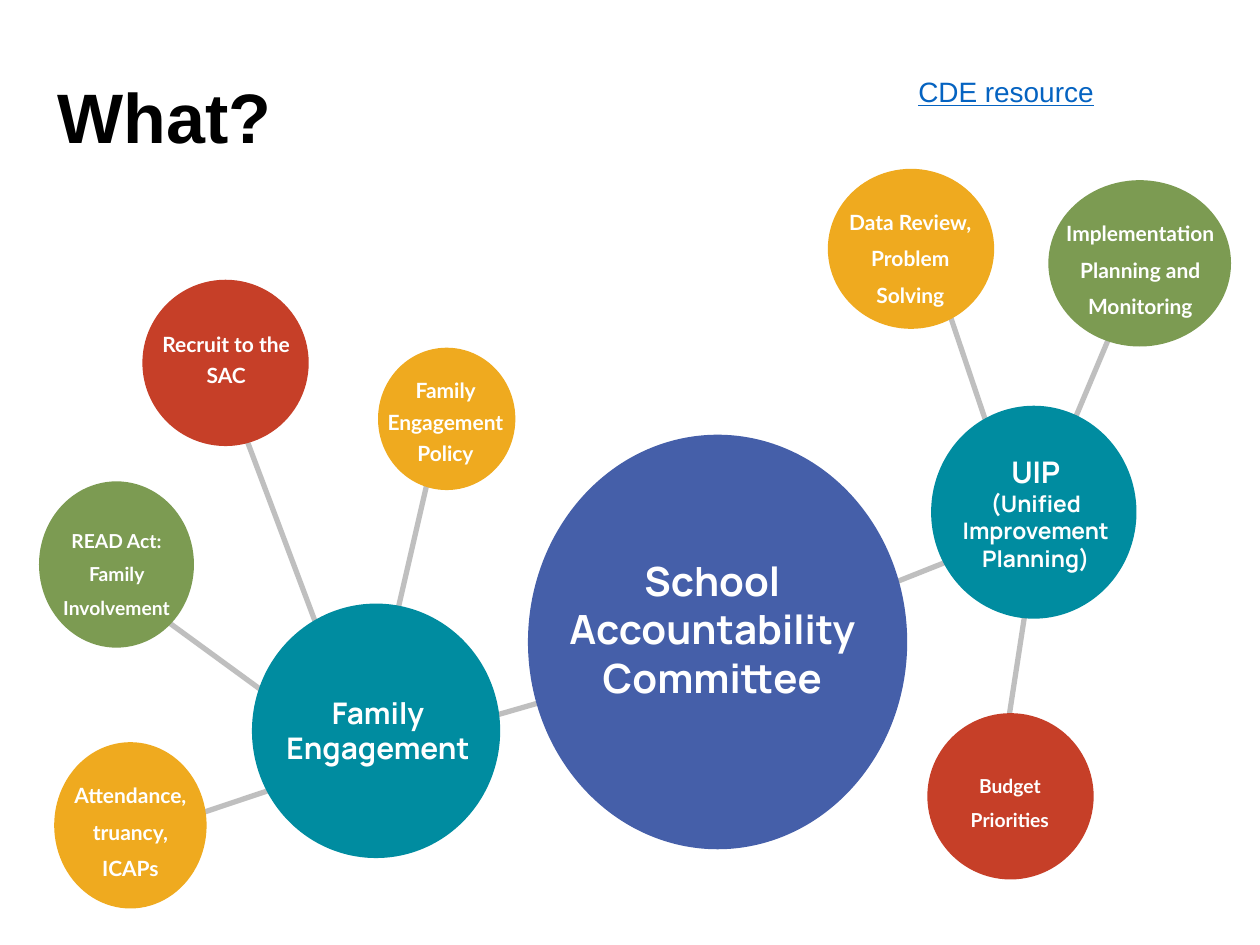
from dataclasses import dataclass

from lxml import etree
from pptx import Presentation
from pptx.dml.color import RGBColor
from pptx.enum.shapes import MSO_CONNECTOR, MSO_SHAPE
from pptx.enum.text import MSO_ANCHOR, PP_ALIGN
from pptx.oxml.ns import qn
from pptx.util import Inches, Pt

STRAIGHT = MSO_CONNECTOR.STRAIGHT
OVAL = MSO_SHAPE.OVAL
TOP, MIDDLE = MSO_ANCHOR.TOP, MSO_ANCHOR.MIDDLE
LEFT, CENTER = PP_ALIGN.LEFT, PP_ALIGN.CENTER


@dataclass(frozen=True)
class Theme:
    blue: str = "455FA9"
    teal: str = "008CA0"
    red: str = "C63F28"
    amber: str = "EFAA1F"
    green: str = "7C9B52"
    spoke: str = "BFBFBF"
    white: str = "FFFFFF"
    black: str = "000000"
    link: str = "0563C1"
    plain_font: str = "Arial"
    hub_font: str = "Manrope"
    topic_font: str = "Lato"
    title_size: int = 40
    core_size: int = 23
    hub_size: int = 17
    resource_size: int = 16
    hub_detail_size: int = 13
    topic_size: int = 12
    small_topic_size: int = 11


theme = Theme()


def add_text(box, lines, font, color, align=CENTER, anchor=MIDDLE,
             margins=(0.04, 0.02), spacing=None, bold=True, underline=None):
    """Add a text box; lines holds one (text, size) pair per paragraph."""
    frame = slide.shapes.add_textbox(*map(Inches, box)).text_frame
    frame.word_wrap = True
    frame.vertical_anchor = anchor
    frame.margin_left = frame.margin_right = Inches(margins[0])
    frame.margin_top = frame.margin_bottom = Inches(margins[1])
    for index, (text, size) in enumerate(lines):
        paragraph = frame.add_paragraph() if index else frame.paragraphs[0]
        paragraph.alignment = align
        paragraph.line_spacing = spacing
        run = paragraph.add_run()
        run.text = text
        run.font.name = font
        run.font.size = Pt(size)
        run.font.bold = bold
        run.font.underline = underline
        run.font.color.rgb = RGBColor.from_string(color)


prs = Presentation()
prs.slide_width, prs.slide_height = Inches(10), Inches(7.5)
slide = prs.slides.add_slide(prs.slide_layouts[6])

# Spokes: start x, start y, end x, end y
spokes = [
    (5.65, 5.2, 8.14, 4.21),    # committee to UIP
    (2.85, 5.99, 5.76, 5.15),   # family engagement to committee
    (2.95, 6, 1.04, 6.64),      # attendance
    (2.86, 6.05, 1.12, 4.78),   # READ Act
    (2.5, 4.93, 1.83, 3.15),    # recruiting
    (2.89, 6, 3.49, 3.4),       # engagement policy
    (8.23, 4.25, 7.82, 6.91),   # budget
    (7.32, 1.85, 8.12, 4.22),   # data review
    (9, 2.21, 8.15, 4.23),      # implementation
]
for ends in spokes:
    spoke = slide.shapes.add_connector(STRAIGHT, *map(Inches, ends))
    spoke.line.color.rgb = RGBColor.from_string(theme.spoke)
    spoke.line.width = Pt(3)
    etree.SubElement(spoke._element.spPr, qn("a:effectLst"))

# Hubs: circle, fill, text box, lines
hubs = [
    ((4.19, 3.45, 3.01, 3.29), theme.blue, (4.22, 4.39, 2.87, 1.2),
     [("School Accountability Committee", theme.core_size)]),
    ((7.39, 3.22, 1.63, 1.69), theme.teal, (7.44, 3.58, 1.56, 0.98),
     [("UIP", theme.hub_size),
      ("(Unified Improvement Planning)", theme.hub_detail_size)]),
    ((2, 4.79, 1.97, 2.02), theme.teal, (2.08, 5.49, 1.84, 0.61),
     [("Family Engagement", theme.hub_size)]),
]

# Topics: circle, fill, text box, text, size, line spacing
topics = [
    ((1.13, 2.22, 1.32, 1.32), theme.red, (1.22, 2.58, 1.15, 0.5),
     "Recruit to the SAC", theme.topic_size, 1.25),
    ((3, 2.76, 1.09, 1.13), theme.amber, (2.99, 2.95, 1.09, 0.75),
     "Family Engagement Policy", theme.topic_size, 1.25),
    ((0.31, 3.82, 1.23, 1.32), theme.green, (0.38, 4.13, 1.09, 0.77),
     "READ Act: Family Involvement", theme.small_topic_size, 1.46),
    ((0.43, 5.89, 1.21, 1.32), theme.amber, (0.49, 6.14, 1.09, 0.83),
     "Attendance, truancy, ICAPs", theme.topic_size, 1.46),
    ((6.57, 1.34, 1.32, 1.27), theme.amber, (6.68, 1.59, 1.09, 0.83),
     "Data Review, Problem Solving", theme.topic_size, 1.46),
    ((8.32, 1.43, 1.45, 1.32), theme.green, (8.39, 1.68, 1.32, 0.83),
     "Implementation Planning and Monitoring", theme.topic_size, 1.46),
    ((7.36, 5.66, 1.32, 1.32), theme.red, (7.47, 6.08, 1.09, 0.5),
     "Budget Priorities", theme.small_topic_size, 1.46),
]

# Circles
for bounds, fill, *_ in hubs + topics:
    circle = slide.shapes.add_shape(OVAL, *map(Inches, bounds))
    circle.shadow.inherit = False
    circle.fill.solid()
    circle.fill.fore_color.rgb = RGBColor.from_string(fill)
    circle.line.fill.background()

# Circle labels
for _, _, box, lines in hubs:
    add_text(box, lines, theme.hub_font, theme.white)
for _, _, box, text, size, spacing in topics:
    add_text(box, [(text, size)], theme.topic_font, theme.white, spacing=spacing)

# Title and resource note
add_text((0.36, 0.48, 6.24, 0.88), [("What?", theme.title_size)],
         theme.plain_font, theme.black, LEFT, TOP, (0.1, 0.1))
add_text((7.19, 0.49, 2.03, 0.47), [("CDE resource", theme.resource_size)],
         theme.plain_font, theme.link, LEFT, TOP, (0.1, 0.1),
         bold=False, underline=True)

prs.save("out.pptx")
